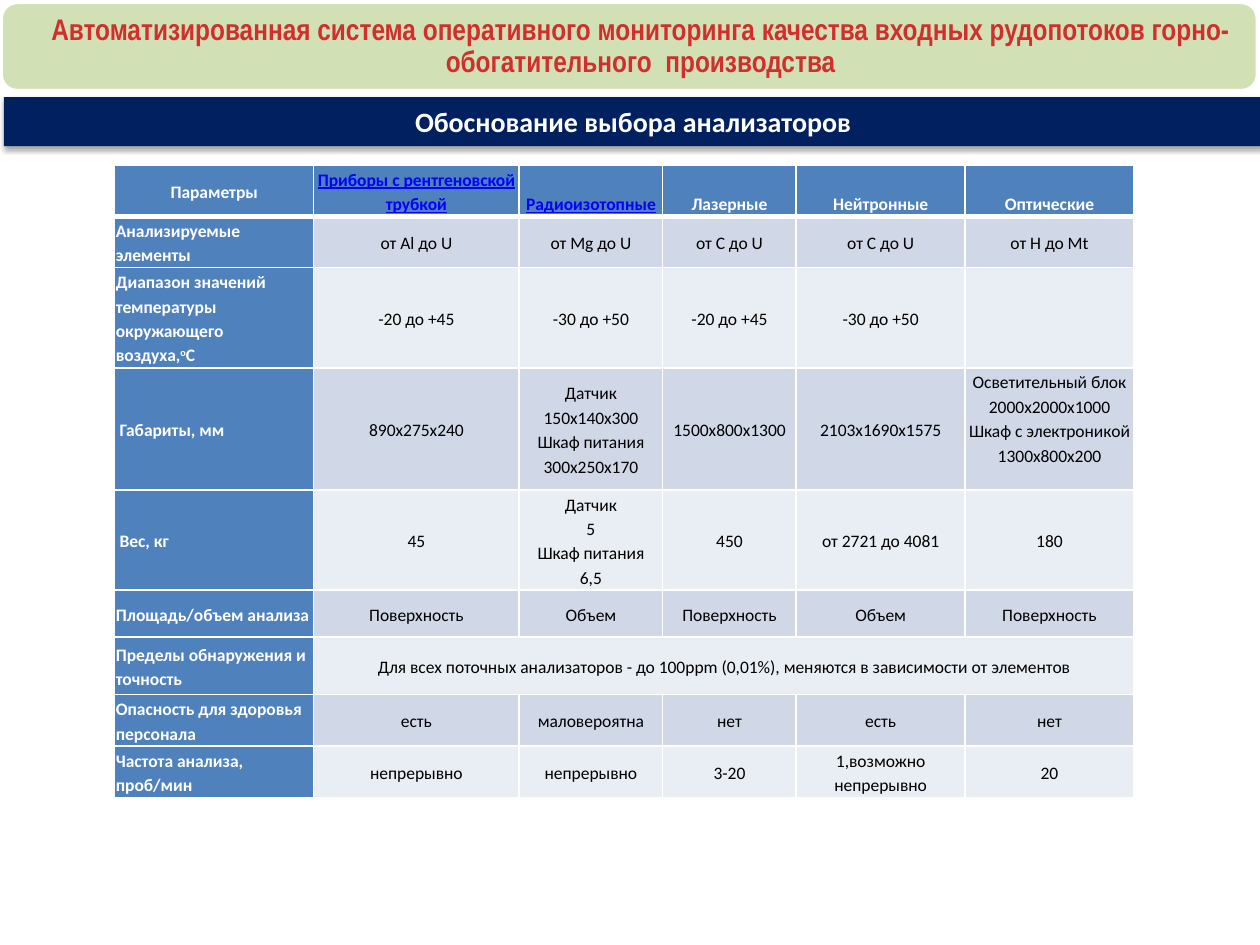
from dataclasses import dataclass

from lxml import etree
from pptx import Presentation
from pptx.dml.color import RGBColor
from pptx.enum.shapes import MSO_SHAPE
from pptx.enum.text import MSO_ANCHOR, PP_ALIGN
from pptx.oxml.ns import qn
from pptx.util import Inches, Pt

ROUNDED = MSO_SHAPE.ROUNDED_RECTANGLE
LEFT, CENTER = PP_ALIGN.LEFT, PP_ALIGN.CENTER
TOP, MIDDLE, BOTTOM = MSO_ANCHOR.TOP, MSO_ANCHOR.MIDDLE, MSO_ANCHOR.BOTTOM

COLORS = {
    "title_fill": "D2E1B5", "title_text": "D02F2C", "bar": "002060",
    "head": "4F81BD", "odd": "D0D8E8", "even": "E9EDF4",
    "white": "FFFFFF", "black": "000000", "link": "0000FF",
}

COLUMN_WIDTHS = [1.58, 1.63, 1.14, 1.06, 1.34, 1.34]
ROW_HEIGHTS = [0.4, 0.4, 0.78, 0.97, 0.78, 0.37, 0.46, 0.4, 0.4]
CELL_INSET = 0.01

# Line breaks inside a cell are vertical tabs; ^ encloses a superscript
ANALYZERS = [
    ["Параметры", "Приборы с рентгеновской трубкой", "Радиоизотопные",
     "Лазерные", "Нейтронные", "Оптические"],
    ["Анализируемые элементы", "от Al до U", "от Mg до U", "от C до U",
     "от C до U", "от H до Mt"],
    ["Диапазон значений\vтемпературы окружающего\vвоздуха,^o^C",
     "-20 до +45", "-30 до +50", "-20 до +45", "-30 до +50", ""],
    ["Габариты, мм", "890x275x240",
     "Датчик\v150х140х300\vШкаф питания\v300х250х170",
     "1500x800x1300", "2103х1690х1575",
     "Осветительный блок\v2000x2000x1000\vШкаф с электроникой\v1300х800х200"],
    ["Вес, кг", "45", "Датчик\v5\vШкаф питания\v6,5", "450",
     "от 2721 до 4081", "180"],
    ["Площадь/объем анализа", "Поверхность", "Объем", "Поверхность",
     "Объем", "Поверхность"],
    ["Пределы обнаружения и точность",
     "Для всех поточных анализаторов - до 100ppm (0,01%), "
     "меняются в зависимости от элементов"],
    ["Опасность для здоровья\vперсонала", "есть", "маловероятна", "нет",
     "есть", "нет"],
    ["Частота анализа, проб/мин", "непрерывно", "непрерывно", "3-20",
     "1,возможно\vнепрерывно", "20"],
]
LIMITS_ROW = 6
INDENTED_ROWS = (3, 4)
LINKED_HEADS = (1, 2)
TOP_CELL = (3, 5)


@dataclass
class Banner:
    text: str
    box: tuple[float, float, float, float]
    corner: float
    fill: str
    color: str
    font: str
    size: float
    left_inset: float = 0.1
    line_spacing: float = 1.0
    outline: str = ""
    shadow: bool = False


BANNERS = [
    Banner("Обоснование выбора анализаторов", (0.03, 0.77, 9.99, 0.39), 0,
           "bar", "white", "Calibri", 16, shadow=True),
    Banner("Автоматизированная система оперативного мониторинга качества "
           "входных рудопотоков горно-обогатительного  производства",
           (0.01, 0.02, 9.97, 0.7), 0.18, "title_fill", "title_text",
           "Arial Narrow", 17, left_inset=0.28, line_spacing=0.9,
           outline="white"),
]


def rgb(name: str) -> RGBColor:
    return RGBColor.from_string(COLORS[name])


def add_xml(parent, tag: str, **attributes):
    return etree.SubElement(parent, qn(tag), attributes)


def style_font(font, color: str, **values) -> None:
    for key, value in values.items():
        setattr(font, key, value)
    font.color.rgb = rgb(color)


def add_shadow(shape) -> None:
    effects = shape._element.spPr.find(qn("a:effectLst"))
    outer = add_xml(effects, "a:outerShdw", blurRad=str(int(Pt(3.1))),
                    dist=str(int(Pt(1.8))), dir="5400000", rotWithShape="0")
    tone = add_xml(outer, "a:srgbClr", val=COLORS["black"])
    add_xml(tone, "a:alpha", val="35000")


def add_banner(slide, banner: Banner) -> None:
    shape = slide.shapes.add_shape(ROUNDED, *map(Inches, banner.box))
    shape.adjustments[0] = banner.corner
    shape.shadow.inherit = False
    shape.fill.solid()
    shape.fill.fore_color.rgb = rgb(banner.fill)
    if banner.outline:
        shape.line.color.rgb = rgb(banner.outline)
        shape.line.width = Pt(2)
    else:
        shape.line.fill.background()
    if banner.shadow:
        add_shadow(shape)
    frame = shape.text_frame
    frame.word_wrap = True
    frame.vertical_anchor = MIDDLE
    frame.margin_left = Inches(banner.left_inset)
    paragraph = frame.paragraphs[0]
    paragraph.text = banner.text
    paragraph.alignment = CENTER
    paragraph.line_spacing = banner.line_spacing
    style_font(paragraph.runs[0].font, banner.color, name=banner.font,
               size=Pt(banner.size), bold=True)


def add_borders(cell, row: int) -> None:
    widths = {"L": 1, "R": 1, "T": 3 if row == 1 else 1,
              "B": 3 if row == 0 else 1}
    properties = cell._tc.get_or_add_tcPr()
    for side, width in widths.items():
        line = add_xml(properties, f"a:ln{side}", w=str(int(Pt(width))))
        add_xml(add_xml(line, "a:solidFill"), "a:srgbClr", val=COLORS["white"])


def fill_cell(cell, text: str, row: int, column: int) -> None:
    is_head = row == 0 or column == 0
    add_borders(cell, row)
    cell.fill.solid()
    cell.fill.fore_color.rgb = rgb(
        "head" if is_head else "odd" if row % 2 else "even")
    for side in ("left", "right", "top", "bottom"):
        setattr(cell, f"margin_{side}", Inches(CELL_INSET))
    if column == 0 and row in INDENTED_ROWS:
        cell.margin_left = Inches(0.04)
    cell.vertical_anchor = MIDDLE
    if row == 0 and column > 1:
        cell.vertical_anchor = BOTTOM
    elif (row, column) == TOP_CELL:
        cell.vertical_anchor = TOP

    paragraph = cell.text_frame.paragraphs[0]
    paragraph.alignment = LEFT if column == 0 and row else CENTER
    paragraph.line_spacing = 1.15
    linked = row == 0 and column in LINKED_HEADS
    color = "link" if linked else "white" if is_head else "black"
    for part, piece in enumerate(text.split("^")):
        for index, words in enumerate(piece.split("\v")):
            if index:
                paragraph.add_line_break()
            run = paragraph.add_run()
            run.text = words
            style_font(run.font, color, name="Calibri", size=Pt(10),
                       bold=is_head, underline=linked)
            if part % 2:
                run._r.get_or_add_rPr().set("baseline", "30000")


def add_analyzer_table(slide) -> None:
    table = slide.shapes.add_table(
        len(ROW_HEIGHTS), len(COLUMN_WIDTHS), Inches(0.91), Inches(1.31),
        Inches(sum(COLUMN_WIDTHS)), Inches(sum(ROW_HEIGHTS))).table
    table.first_row = table.horz_banding = False
    for column, width in zip(table.columns, COLUMN_WIDTHS):
        column.width = Inches(width)
    for row, height in zip(table.rows, ROW_HEIGHTS):
        row.height = Inches(height)
    # One shared value across all analyzers
    table.cell(LIMITS_ROW, 1).merge(
        table.cell(LIMITS_ROW, len(COLUMN_WIDTHS) - 1))
    for row, texts in enumerate(ANALYZERS):
        for column, text in enumerate(texts):
            fill_cell(table.cell(row, column), text, row, column)


def main() -> None:
    presentation = Presentation()
    presentation.slide_width = Inches(10)
    presentation.slide_height = Inches(7.5)
    slide = presentation.slides.add_slide(presentation.slide_layouts[6])
    add_analyzer_table(slide)
    for banner in BANNERS:
        add_banner(slide, banner)
    presentation.save("out.pptx")


if __name__ == "__main__":
    main()
